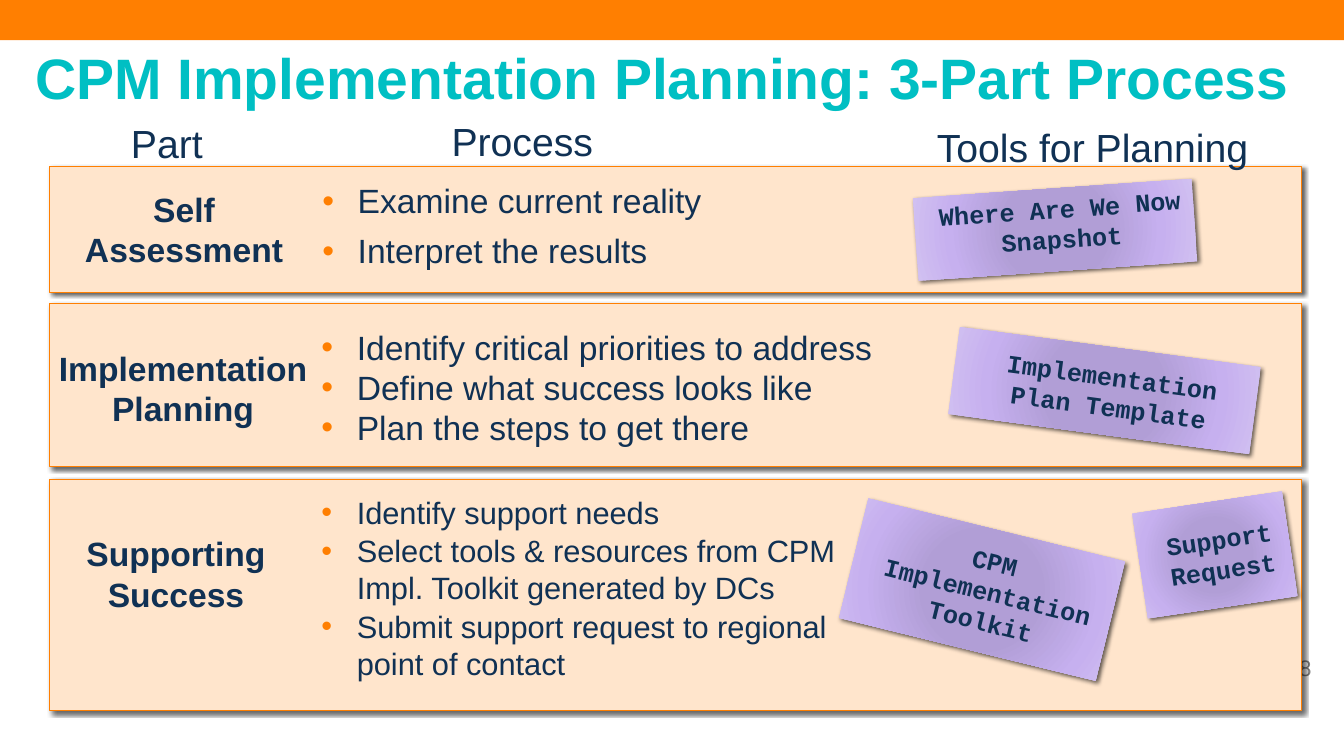
from lxml import etree
from pptx import Presentation
from pptx.dml.color import RGBColor
from pptx.enum.shapes import MSO_SHAPE
from pptx.enum.text import MSO_ANCHOR, PP_ALIGN
from pptx.oxml import parse_xml
from pptx.oxml.ns import nsdecls, qn
from pptx.util import Inches, Pt

RECTANGLE = MSO_SHAPE.RECTANGLE
LEFT, CENTER = PP_ALIGN.LEFT, PP_ALIGN.CENTER
TOP, MIDDLE, BOTTOM = MSO_ANCHOR.TOP, MSO_ANCHOR.MIDDLE, MSO_ANCHOR.BOTTOM

COLORS = {
    "orange": "FF7F01",
    "peach": "FFE5CC",
    "teal": "00BFC3",
    "navy": "103154",
    "gray": "808080",
    "shadow": "000000",
}
STICKER_STOPS = [(0, "B19CD8"), (34, "B19ED6"), (70, "C6B0EF"), (100, "D2C2F1")]
BAND_LEFT, BAND_WIDTH = 0.49, 12.42
BULLET_INDENT = 0.35
STICKER_INDENT = 0.12

# top and height of each band
BANDS = [(1.65, 1.25), (3.01, 1.62), (4.76, 2.29)]

# text, box, anchor
HEADINGS = [
    ("Part", (0.88, 1.15, 1.55, 0.55), BOTTOM),
    ("Process", (4.36, 1.11, 1.64, 0.56), TOP),
    ("Tools for Planning", (8.86, 1.17, 3.95, 0.65), TOP),
]

# lines, box
PARTS = [
    (["Self", "Assessment"], (0.6, 1.82, 2.45, 0.91)),
    (["Implementation Planning"], (0.44, 3.4, 2.75, 0.91)),
    (["Supporting Success"], (0.6, 5.24, 2.29, 0.91)),
]

# steps, box, size, line spacing, space before
PROCESSES = [
    (["Examine current reality", "Interpret the results"],
     (3.1, 1.78, 4, 1), 24, 0.9, 10),
    (["Identify critical priorities to address",
      "Define what success looks like",
      "Plan the steps to get there"],
     (3.09, 3.19, 5.78, 1.31), 24, 1, 0),
    (["Identify support needs",
      "Select tools & resources from CPM Impl. Toolkit generated by DCs",
      "Submit support request to regional point of contact"],
     (3.09, 4.85, 5.49, 2), 22, 1, 1),
]

# lines, box, rotation, anchor
STICKERS = [
    (["Where Are We Now Snapshot"], (9.08, 1.87, 2.77, 0.82), -4, TOP),
    (["Implementation Plan Template"], (9.45, 3.44, 3.01, 0.87), 7.6, MIDDLE),
    (["Support Request"], (11.3, 4.98, 1.5, 1.05), -8.5, MIDDLE),
    (["CPM", "Implementation Toolkit"], (8.43, 5.24, 2.62, 1.22), 13.8, MIDDLE),
]


def color(name):
    return RGBColor.from_string(COLORS[name])


def fill_text(frame, lines, size, ink="navy", bold=False, font="Arial",
              align=LEFT, anchor=TOP, line_spacing=1, space_before=0):
    frame.word_wrap = True
    frame.vertical_anchor = anchor
    for index, line in enumerate(lines):
        paragraph = frame.paragraphs[0] if index == 0 else frame.add_paragraph()
        paragraph.text = line
        paragraph.alignment = align
        paragraph.line_spacing = line_spacing
        paragraph.space_before = Pt(space_before if index else 0)
        paragraph.font.size = Pt(size)
        paragraph.font.name = font
        paragraph.font.bold = bold
        paragraph.font.color.rgb = color(ink)


def add_text(slide, box, lines, size, **style):
    frame = slide.shapes.add_textbox(*map(Inches, box)).text_frame
    fill_text(frame, lines, size, **style)
    return frame


def add_rectangle(slide, box):
    """Add a rectangle without shadow or line."""
    rectangle = slide.shapes.add_shape(RECTANGLE, *map(Inches, box))
    rectangle.shadow.inherit = False
    rectangle.line.fill.background()
    return rectangle


def add_shadow(shape):
    effects = shape._element.spPr.find(qn("a:effectLst"))
    effects.append(parse_xml(
        f'<a:outerShdw {nsdecls("a")} blurRad="{Pt(3)}" dist="{Pt(2)}" '
        f'dir="{45 * 60000}" algn="tl" rotWithShape="0">'
        f'<a:srgbClr val="{COLORS["shadow"]}"><a:alpha val="60000"/></a:srgbClr>'
        '</a:outerShdw>'))


def add_band(slide, top, height):
    band = add_rectangle(slide, (BAND_LEFT, top, BAND_WIDTH, height))
    band.fill.solid()
    band.fill.fore_color.rgb = color("peach")
    band.line.color.rgb = color("orange")
    band.line.width = Pt(0.75)
    add_shadow(band)


def add_bullets(slide, box, steps, size, line_spacing, space_before):
    frame = add_text(slide, box, steps, size, line_spacing=line_spacing,
                     space_before=space_before)
    for paragraph in frame.paragraphs:
        properties = paragraph._p.get_or_add_pPr()
        properties.set("marL", str(Inches(BULLET_INDENT)))
        properties.set("indent", str(-Inches(BULLET_INDENT)))
        bullet_color = etree.Element(qn("a:buClr"))
        etree.SubElement(bullet_color, qn("a:srgbClr"), val=COLORS["orange"])
        bullet_font = etree.Element(qn("a:buFont"), typeface="Arial")
        bullet = etree.Element(qn("a:buChar"), char="•")
        defaults = properties.find(qn("a:defRPr"))
        for element in (bullet_color, bullet_font, bullet):
            defaults.addprevious(element)


def add_sticker(slide, lines, box, rotation, anchor):
    """Add a tilted note with a radial lilac gradient."""
    sticker = add_rectangle(slide, box)
    sticker.rotation = rotation
    stops = "".join(
        f'<a:gs pos="{position * 1000}"><a:srgbClr val="{shade}"/></a:gs>'
        for position, shade in STICKER_STOPS)
    sticker._element.spPr.find(qn("a:prstGeom")).addnext(parse_xml(
        f'<a:gradFill {nsdecls("a")} rotWithShape="1"><a:gsLst>{stops}</a:gsLst>'
        '<a:path path="circle"><a:fillToRect l="100000" t="100000" '
        'r="100000" b="100000"/></a:path></a:gradFill>'))
    add_shadow(sticker)
    fill_text(sticker.text_frame, lines, 18, bold=True, font="Courier New",
              align=CENTER, anchor=anchor)
    for paragraph in sticker.text_frame.paragraphs:
        properties = paragraph._p.get_or_add_pPr()
        properties.set("marL", str(Inches(STICKER_INDENT)))
        properties.set("indent", "0")


def main():
    presentation = Presentation()
    presentation.slide_width = Inches(13.33)
    presentation.slide_height = Inches(7.5)
    slide = presentation.slides.add_slide(presentation.slide_layouts[6])

    top_bar = add_rectangle(slide, (0, 0, 13.33, 0.4))
    top_bar.fill.solid()
    top_bar.fill.fore_color.rgb = color("orange")
    add_text(slide, (12.52, 6.26, 0.73, 0.73), ["38"], 16, ink="gray",
             align=CENTER, anchor=MIDDLE)
    add_text(slide, (0.25, 0.33, 12.9, 0.94),
             ["CPM Implementation Planning: 3-Part Process"], 40.7,
             ink="teal", bold=True, anchor=MIDDLE, line_spacing=0.9)

    for top, height in BANDS:
        add_band(slide, top, height)
    for heading, box, anchor in HEADINGS:
        add_text(slide, box, [heading], 28, align=CENTER, anchor=anchor)
    for lines, box in PARTS:
        add_text(slide, box, lines, 24, bold=True, align=CENTER)
    for steps, box, size, line_spacing, space_before in PROCESSES:
        add_bullets(slide, box, steps, size, line_spacing, space_before)
    for sticker in STICKERS:
        add_sticker(slide, *sticker)

    presentation.save("out.pptx")


if __name__ == "__main__":
    main()
